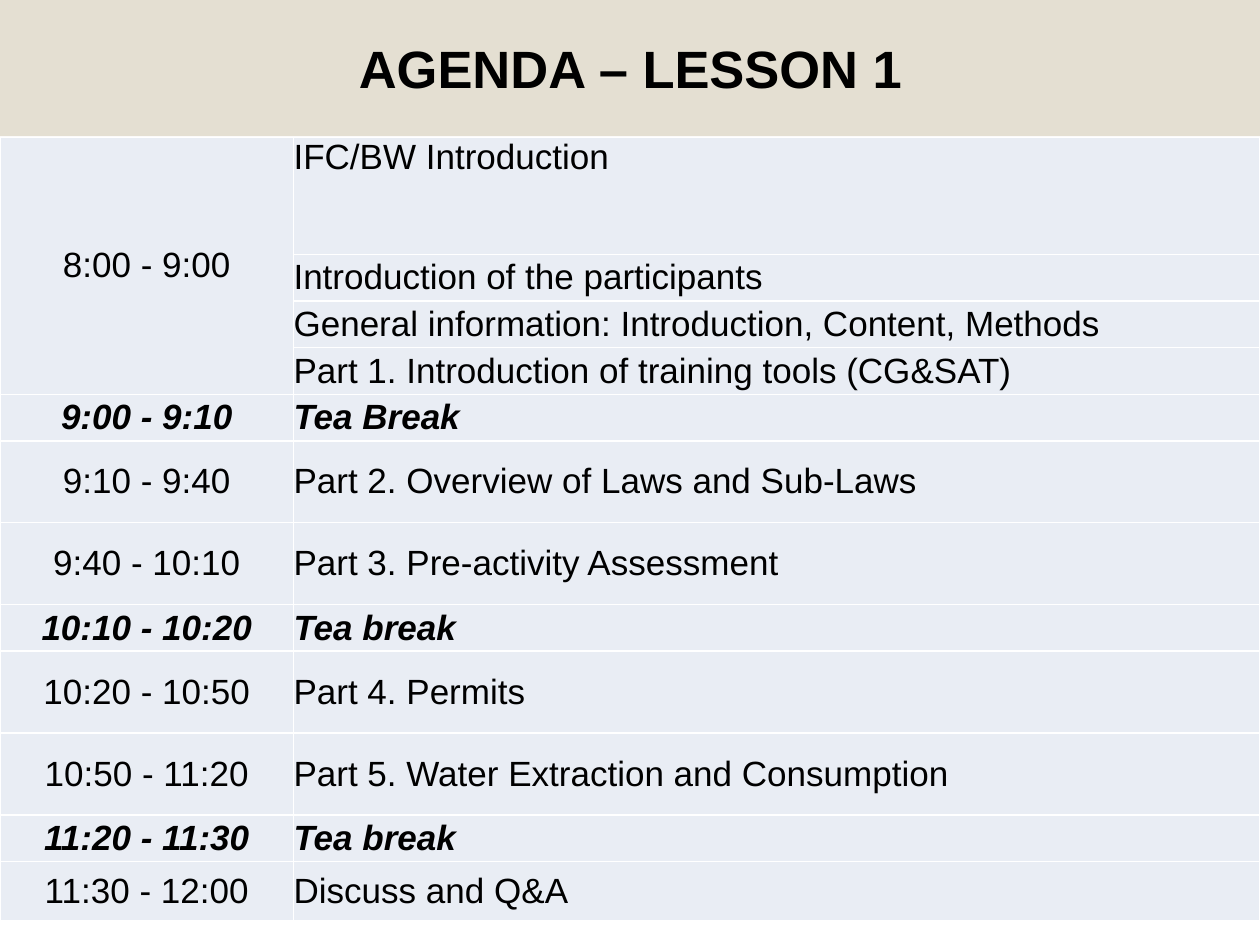
from typing import NamedTuple

import pptx
import pptx.dml.color
import pptx.enum.shapes
import pptx.enum.text
import pptx.util
from lxml import etree
from pptx.oxml.ns import qn

Inches = pptx.util.Inches
Pt = pptx.util.Pt
ALIGN = pptx.enum.text.PP_ALIGN
ANCHOR = pptx.enum.text.MSO_ANCHOR

COLORS = {"banner": "E4DFD2", "cell": "E9EDF4", "border": "FFFFFF", "text": "000000"}
FONT = "Arial"
TIME_WIDTH, TOPIC_WIDTH = 2.33, 7.67
SHORT, TALL = 0.37, 0.65


class Session(NamedTuple):
    time: str
    topic: str
    height: float = SHORT
    is_break: bool = False


AGENDA = [
    Session("8:00 - 9:00", "IFC/BW Introduction", 0.93),
    Session("", "Introduction of the participants"),
    Session("", "General information: Introduction, Content, Methods"),
    Session("", "Part 1. Introduction of training tools (CG&SAT)"),
    Session("9:00 - 9:10", "Tea Break", is_break=True),
    Session("9:10 - 9:40", "Part 2. Overview of Laws and Sub-Laws", TALL),
    Session("9:40 - 10:10", "Part 3. Pre-activity Assessment", TALL),
    Session("10:10 - 10:20", "Tea break", is_break=True),
    Session("10:20 - 10:50", "Part 4. Permits", TALL),
    Session("10:50 - 11:20", "Part 5. Water Extraction and Consumption", TALL),
    Session("11:20 - 11:30", "Tea break", is_break=True),
    Session("11:30 - 12:00", "Discuss and Q&A", 0.47),
]
OPENING_ROWS = 4


def rgb(name: str) -> pptx.dml.color.RGBColor:
    return pptx.dml.color.RGBColor.from_string(COLORS[name])


def style_font(font, size: float, bold: bool = False, italic: bool = False) -> None:
    font.name = FONT
    font.size = Pt(size)
    font.bold = bold
    font.italic = italic
    font.color.rgb = rgb("text")


def clear_margins(box) -> None:
    box.margin_left = box.margin_right = box.margin_top = box.margin_bottom = 0


def add_borders(cell) -> None:
    tc_pr = cell._tc.get_or_add_tcPr()
    for side in ("a:lnL", "a:lnR", "a:lnT", "a:lnB"):
        ln = etree.SubElement(tc_pr, qn(side), w=str(Pt(1)))
        fill = etree.SubElement(ln, qn("a:solidFill"))
        etree.SubElement(fill, qn("a:srgbClr"), val=COLORS["border"])


def fill_cell(cell, text: str, align: ALIGN, emphasis: bool) -> None:
    add_borders(cell)
    cell.fill.solid()
    cell.fill.fore_color.rgb = rgb("cell")
    clear_margins(cell)
    cell.vertical_anchor = ANCHOR.MIDDLE
    p = cell.text_frame.paragraphs[0]
    p.alignment = align
    style_font(p.font, 20, emphasis, emphasis)
    if text:
        r = p.add_run()
        r.text = text
        style_font(r.font, 20, emphasis, emphasis)


def add_title(s) -> None:
    banner = s.shapes.add_shape(
        pptx.enum.shapes.MSO_SHAPE.RECTANGLE, 0, 0, Inches(10), Inches(1.08))
    banner.shadow.inherit = False
    banner.fill.solid()
    banner.fill.fore_color.rgb = rgb("banner")
    banner.line.fill.background()

    tf = s.shapes.add_textbox(Inches(0.38), Inches(0.33), Inches(9.25), Inches(0.46)).text_frame
    tf.word_wrap = True
    clear_margins(tf)
    p = tf.paragraphs[0]
    p.alignment = ALIGN.CENTER
    p.line_spacing = Pt(32.7)
    r = p.add_run()
    r.text = "AGENDA – LESSON 1"
    style_font(r.font, 30, bold=True)


def add_agenda(s) -> None:
    height = sum(session.height for session in AGENDA)
    table = s.shapes.add_table(
        len(AGENDA), 2, 0, Inches(1.09), Inches(10), Inches(height)).table
    table.first_row = table.horz_banding = False
    for column, width in zip(table.columns, (TIME_WIDTH, TOPIC_WIDTH)):
        column.width = Inches(width)
    for i, session in enumerate(AGENDA):
        table.rows[i].height = Inches(session.height)
        fill_cell(table.cell(i, 0), session.time, ALIGN.CENTER, session.is_break)
        fill_cell(table.cell(i, 1), session.topic, ALIGN.LEFT, session.is_break)
    table.cell(0, 1).vertical_anchor = ANCHOR.TOP
    table.cell(0, 0).merge(table.cell(OPENING_ROWS - 1, 0))


def main() -> None:
    prs = pptx.Presentation()
    prs.slide_width, prs.slide_height = Inches(10), Inches(7.5)
    s = prs.slides.add_slide(prs.slide_layouts[6])
    add_title(s)
    add_agenda(s)
    prs.save("out.pptx")


if __name__ == "__main__":
    main()
